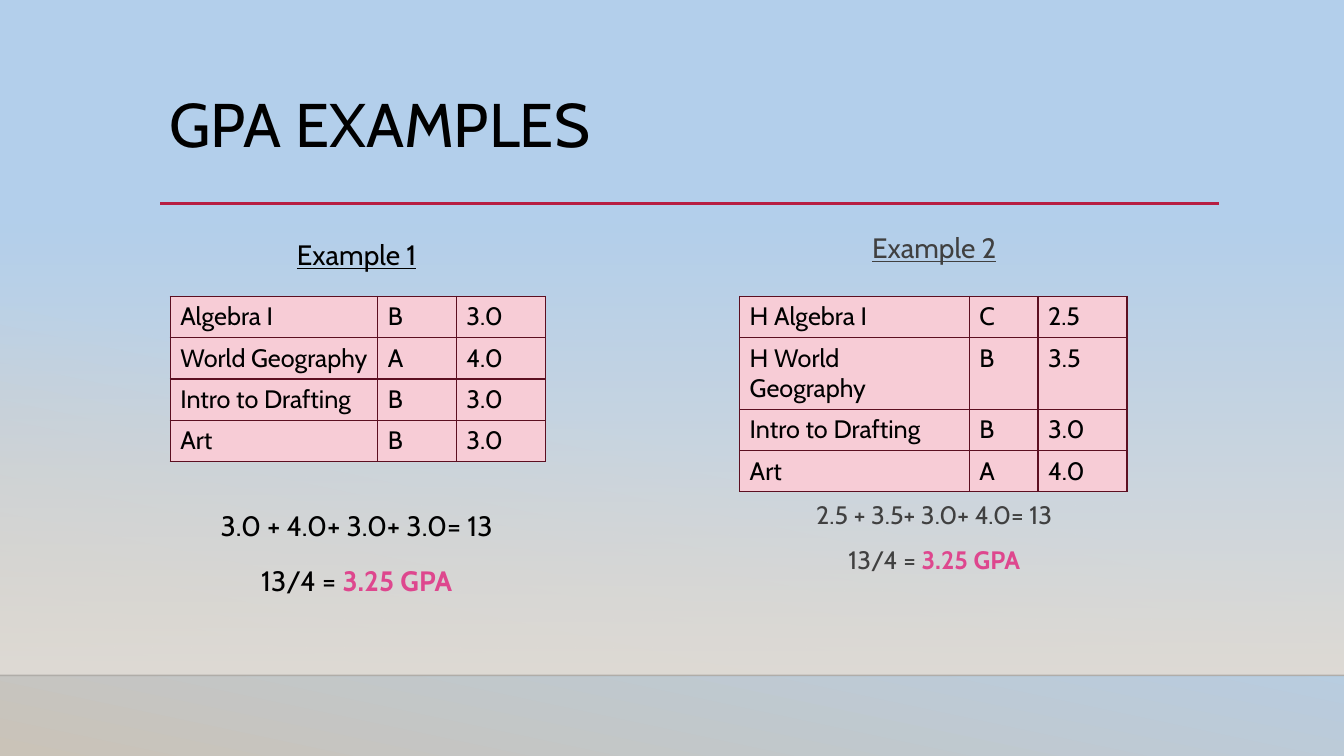
from lxml import etree
from pptx import Presentation
from pptx.dml.color import RGBColor
from pptx.enum.shapes import MSO_CONNECTOR, MSO_SHAPE
from pptx.enum.text import MSO_ANCHOR, MSO_AUTO_SIZE, PP_ALIGN
from pptx.oxml.ns import qn
from pptx.util import Cm, Pt

LEFT, CENTER = PP_ALIGN.LEFT, PP_ALIGN.CENTER
TOP = MSO_ANCHOR.TOP
NO_AUTOFIT = MSO_AUTO_SIZE.NONE
RECTANGLE = MSO_SHAPE.RECTANGLE
STRAIGHT = MSO_CONNECTOR.STRAIGHT

BLACK = RGBColor(0x00, 0x00, 0x00)
GREY = RGBColor(0x40, 0x40, 0x40)
PINK = RGBColor(0xDE, 0x47, 0x8E)
RED = RGBColor(0xB7, 0x1E, 0x42)
WINE = RGBColor(0x5C, 0x0F, 0x21)
ROSE = RGBColor(0xF7, 0xCC, 0xD6)
SKY = RGBColor(0xB3, 0xCF, 0xEB)
SAND = RGBColor(0xCA, 0xC3, 0xB8)
MIST = RGBColor(0xDF, 0xDB, 0xD5)

WIDTH, HEIGHT = 33.87, 19.05
HORIZON = 17.02
TABLE_TOP = 7.47
ROW_HEIGHT = 1.04


def add_run(p, text, size, color=BLACK, font="Cabin", bold=False, underline=False):
    r = p.add_run()
    r.text = text
    r.font.name = font
    r.font.size = Pt(size)
    r.font.color.rgb = color
    r.font.bold = bold
    r.font.underline = underline


def set_alpha(parent, percent):
    """Set the opacity of the first RGB colour under an XML element."""
    color = next(parent.iter(qn("a:srgbClr")))
    etree.SubElement(color, qn("a:alpha"), val=str(percent * 1000))


def set_gradient(fill, stops, angle):
    """Apply (position, colour) stops; the angle runs counter-clockwise."""
    fill.gradient()
    fill.gradient_angle = angle
    for stop, (position, color) in zip(fill.gradient_stops, stops):
        stop.position = position
        stop.color.rgb = color


class GpaSlide:
    def __init__(self, prs):
        self.slide = prs.slides.add_slide(prs.slide_layouts[3])
        self.shapes = self.slide.shapes

    def background(self):
        set_gradient(self.slide.background.fill, [(0.55, SKY), (1, SAND)], 258)
        sp = self.shapes.add_shape(RECTANGLE, 0, Cm(5.61), Cm(WIDTH), Cm(HORIZON - 5.61))
        sp.shadow.inherit = False
        sp.line.fill.background()
        set_gradient(sp.fill, [(0, MIST), (1, MIST)], 270)
        set_alpha(sp._element.spPr, 0)
        self.shapes._spTree.insert(2, sp._element)

    def rule(self, left, right, y, color, width, opacity=100):
        line = self.shapes.add_connector(STRAIGHT, Cm(left), Cm(y), Cm(right), Cm(y))
        line.line.color.rgb = color
        line.line.width = Pt(width)
        set_alpha(line._element.spPr, opacity)
        etree.SubElement(line._element.spPr, qn("a:effectLst"))

    def placeholder(self, index, left, top, width, height):
        sp = self.slide.placeholders[index]
        sp.left, sp.top, sp.width, sp.height = Cm(left), Cm(top), Cm(width), Cm(height)
        tf = sp.text_frame
        tf.word_wrap = True
        tf.auto_size = NO_AUTOFIT
        tf.vertical_anchor = TOP
        return tf

    def title(self, text):
        p = self.placeholder(0, 4.01, 2.24, 26.67, 2.95).paragraphs[0]
        p.alignment = LEFT
        p.line_spacing = 0.9
        add_run(p, text, 44)

    def working(self, index, box, heading, total, division, result,
                color, size, spacing, table_gap):
        """Write the heading above a table and the sums below it."""
        tf = self.placeholder(index, *box)
        lines = [
            (0, [(heading, dict(size=20, color=color, underline=True))]),
            (table_gap, [(total, dict(size=size, color=color))]),
            (10, [(division, dict(size=size, color=color)),
                  (result, dict(size=size, color=PINK, bold=True))]),
        ]
        for i, (before, runs) in enumerate(lines):
            p = tf.add_paragraph() if i else tf.paragraphs[0]
            pPr = p._p.get_or_add_pPr()
            pPr.set("marL", "0")
            pPr.set("indent", "0")
            etree.SubElement(pPr, qn("a:buNone"))
            p.alignment = CENTER
            p.line_spacing = spacing
            p.space_before = Pt(before)
            for text, style in runs:
                add_run(p, text, **style)

    def cell(self, cell, text):
        tcPr = cell._tc.get_or_add_tcPr()
        for side in ("lnL", "lnR", "lnT", "lnB"):
            ln = etree.SubElement(tcPr, qn("a:" + side), w=str(Pt(1)))
            fill = etree.SubElement(ln, qn("a:solidFill"))
            etree.SubElement(fill, qn("a:srgbClr"), val=str(WINE))
        cell.fill.solid()
        cell.fill.fore_color.rgb = ROSE
        add_run(cell.text_frame.paragraphs[0], text, 18)

    def grades(self, left, widths, rows):
        frame = self.shapes.add_table(len(rows), len(widths), Cm(left), Cm(TABLE_TOP),
                                      Cm(sum(widths)), Cm(ROW_HEIGHT * len(rows)))
        table = frame.table
        table.first_row = table.horz_banding = False
        for column, width in zip(table.columns, widths):
            column.width = Cm(width)
        for i, row in enumerate(rows):
            table.rows[i].height = Cm(ROW_HEIGHT)
            for j, text in enumerate(row):
                self.cell(table.cell(i, j), text)


def main():
    prs = Presentation()
    prs.slide_width, prs.slide_height = Cm(WIDTH), Cm(HEIGHT)
    s = GpaSlide(prs)
    s.background()
    s.rule(0, WIDTH, HORIZON, BLACK, 1, opacity=20)
    s.rule(4.04, 30.73, 5.13, RED, 2.5)
    s.title("GPA EXAMPLES")
    s.working(1, (2.54, 5.69, 12.9, 9.58), "Example 1", "3.0 + 4.0+ 3.0+ 3.0= 13",
              "13/4 = ", "3.25 GPA", color=BLACK, size=20, spacing=1.2, table_gap=165)
    s.grades(4.29, (5.23, 1.98, 2.24), [
        ("Algebra I", "B", "3.0"),
        ("World Geography", "A", "4.0"),
        ("Intro to Drafting", "B", "3.0"),
        ("Art", "B", "3.0"),
    ])
    s.working(2, (17.73, 5.69, 11.63, 11.28), "Example 2", "2.5 + 3.5+ 3.0+ 4.0= 13",
              "13/4 = ", "3.25 GPA", color=GREY, size=18, spacing=1, table_gap=168)
    s.grades(18.64, (5.79, 1.73, 2.24), [
        ("H Algebra I", "C", "2.5"),
        ("H World Geography", "B", "3.5"),
        ("Intro to Drafting", "B", "3.0"),
        ("Art", "A", "4.0"),
    ])
    prs.save("out.pptx")


if __name__ == "__main__":
    main()
